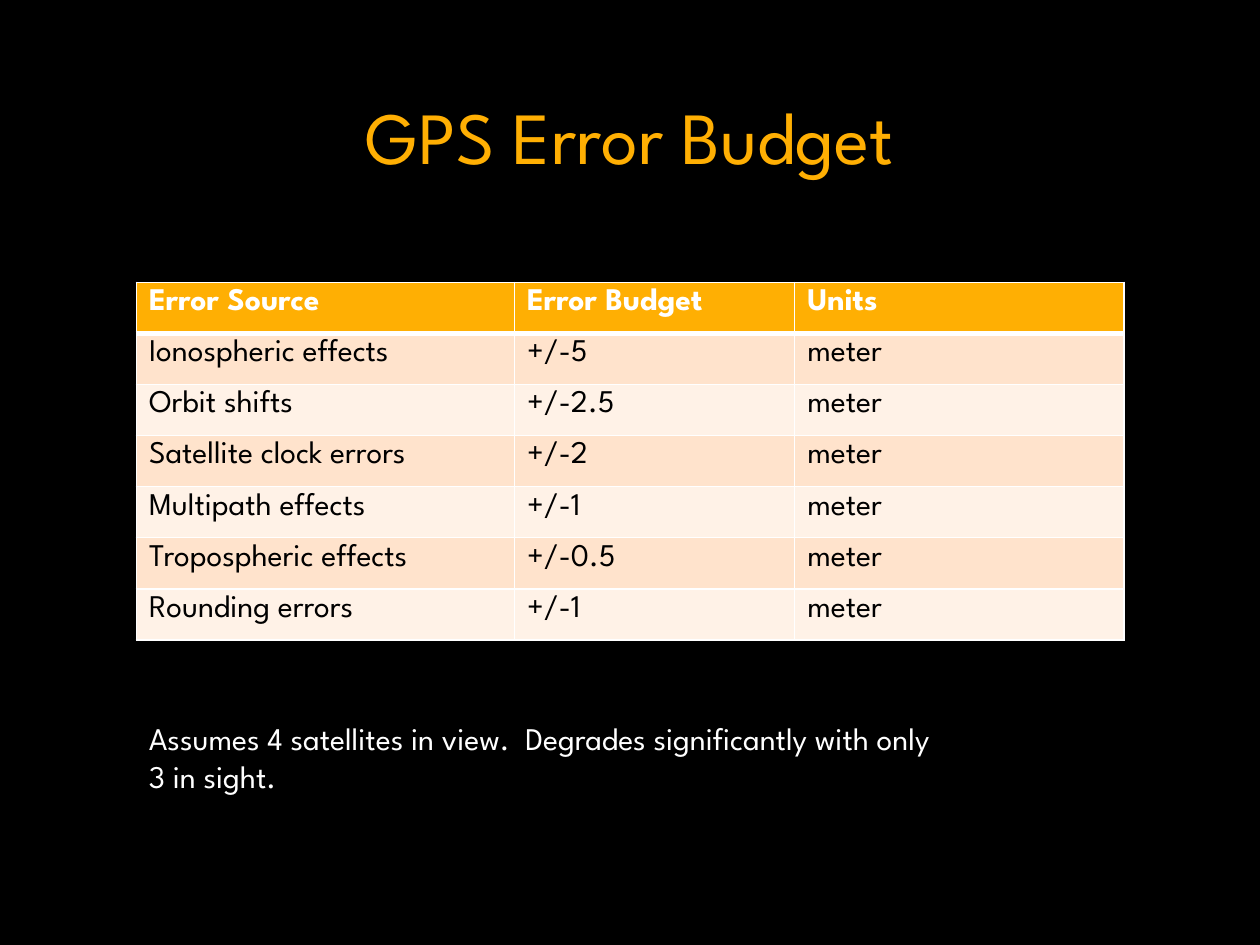
from lxml import etree
from pptx import Presentation, util as u
from pptx.dml.color import RGBColor
from pptx.enum import text
from pptx.oxml import ns

Cm, Pt = u.Cm, u.Pt

BLACK = RGBColor(0x00, 0x00, 0x00)
WHITE = RGBColor(0xFF, 0xFF, 0xFF)
AMBER = RGBColor(0xFF, 0xAF, 0x03)
PEACH = RGBColor(0xFF, 0xE3, 0xCC)
CREAM = RGBColor(0xFF, 0xF2, 0xE7)

ERROR_BUDGET = [
    ("Error Source", "Error Budget", "Units"),
    ("Ionospheric effects", "+/-5", "meter"),
    ("Orbit shifts", "+/-2.5", "meter"),
    ("Satellite clock errors", "+/-2", "meter"),
    ("Multipath effects", "+/-1", "meter"),
    ("Tropospheric effects", "+/-0.5", "meter"),
    ("Rounding errors", "+/-1", "meter"),
]


class SlideBuilder:
    font_name = "League Spartan"
    body_size = 18

    def __init__(self, slide):
        self.slide = slide

    def background(self, color):
        fill = self.slide.background.fill
        fill.solid()
        fill.fore_color.rgb = color

    def style(self, text_frame, color, size=body_size, bold=False):
        for paragraph in text_frame.paragraphs:
            for run in paragraph.runs:
                run.font.name = self.font_name
                run.font.size = Pt(size)
                run.font.bold = bold
                run.font.color.rgb = color

    def text_box(self, words, left, top, width, height, color, size=body_size,
                 align=text.PP_ALIGN.LEFT, anchor=text.MSO_ANCHOR.TOP):
        shape = self.slide.shapes.add_textbox(Cm(left), Cm(top), Cm(width), Cm(height))
        text_frame = shape.text_frame
        text_frame.word_wrap = True
        text_frame.vertical_anchor = anchor
        text_frame.text = words
        text_frame.paragraphs[0].alignment = align
        self.style(text_frame, color, size)

    def borders(self, cell, bottom, top):
        """Draw white cell edges; they must precede the fill in the XML."""
        properties = cell._tc.get_or_add_tcPr()
        widths = {"a:lnL": 1, "a:lnR": 1, "a:lnT": top, "a:lnB": bottom}
        for index, (tag, width) in enumerate(widths.items()):
            line = etree.Element(ns.qn(tag), w=str(Pt(width)))
            fill = etree.SubElement(line, ns.qn("a:solidFill"))
            etree.SubElement(fill, ns.qn("a:srgbClr"), val=str(WHITE))
            properties.insert(index, line)

    def table(self, rows, left, top, column_widths, row_height):
        frame = self.slide.shapes.add_table(
            len(rows), len(column_widths), Cm(left), Cm(top),
            Cm(sum(column_widths)), Cm(row_height * len(rows)))
        table = frame.table
        for column, width in zip(table.columns, column_widths):
            column.width = Cm(width)
        for row_index, values in enumerate(rows):
            header = row_index == 0
            band = AMBER if header else (CREAM, PEACH)[row_index % 2]
            table.rows[row_index].height = Cm(row_height)
            for cell, value in zip(table.rows[row_index].cells, values):
                cell.text_frame.text = value
                self.style(cell.text_frame, WHITE if header else BLACK, bold=header)
                cell.fill.solid()
                cell.fill.fore_color.rgb = band
                self.borders(cell, bottom=3 if header else 1,
                             top=3 if row_index == 1 else 1)


def main():
    presentation = Presentation()
    presentation.slide_width, presentation.slide_height = Cm(25.4), Cm(19.05)
    builder = SlideBuilder(presentation.slides.add_slide(presentation.slide_layouts[6]))
    builder.background(BLACK)
    builder.text_box("GPS Error Budget", 1.7, 1.63, 22, 2.18, AMBER, size=42,
                     align=text.PP_ALIGN.CENTER, anchor=text.MSO_ANCHOR.MIDDLE)
    builder.table(ERROR_BUDGET, 2.75, 5.69, (7.62, 5.65, 6.64), 1.03)
    builder.text_box(
        "Assumes 4 satellites in view.  Degrades significantly with only 3 in sight.",
        2.75, 14.38, 16.3, 1.8, WHITE)
    presentation.save("out.pptx")


if __name__ == "__main__":
    main()
